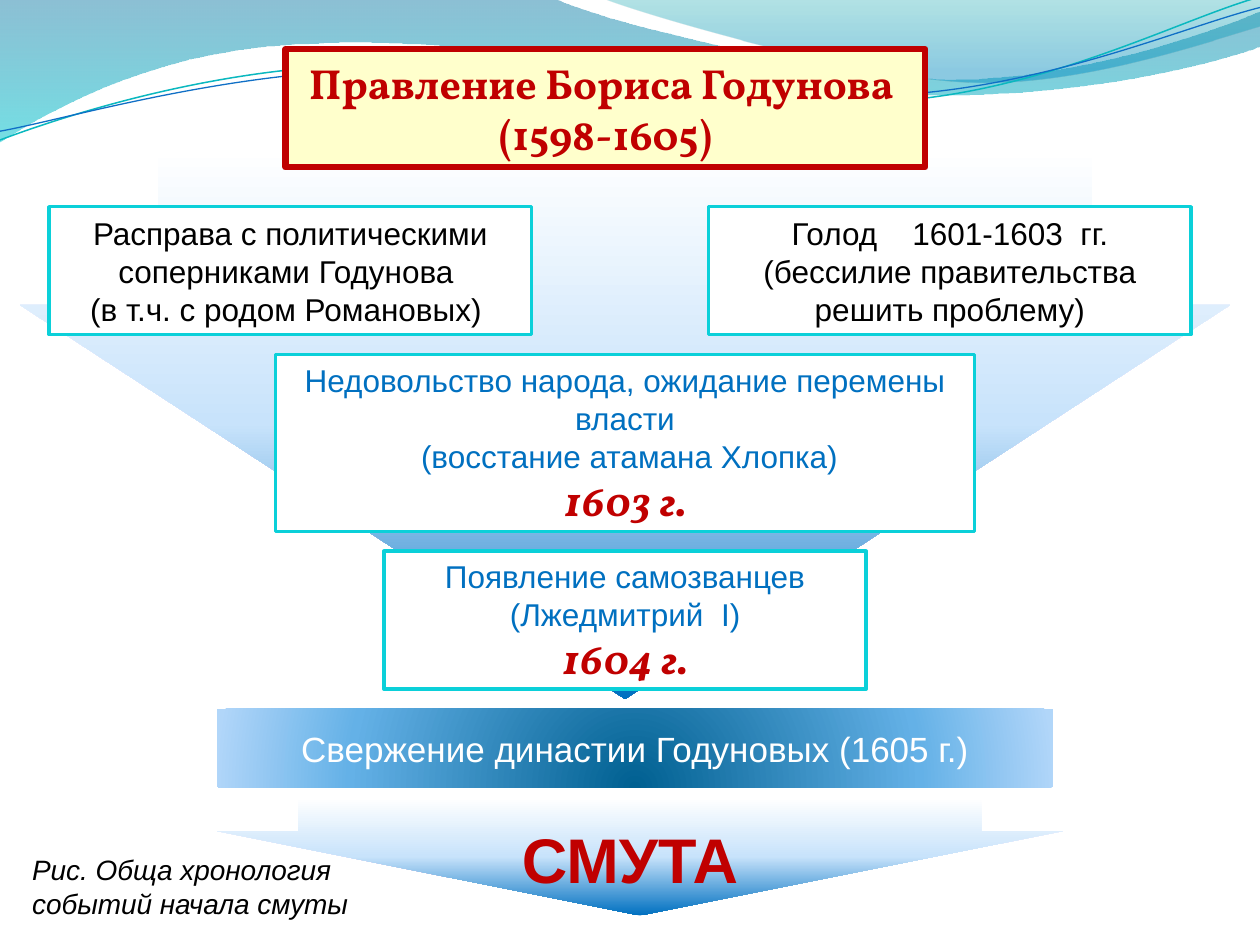
"""Build a slide on the reign of Boris Godunov and the start of the Troubles."""
import pptx
import pptx.dml.color
import pptx.enum.shapes
import pptx.enum.text
import pptx.oxml
import pptx.oxml.ns
import pptx.util

Pt = pptx.util.Pt
KIND = pptx.enum.shapes.MSO_SHAPE
ALIGN = pptx.enum.text.PP_ALIGN
ANCHOR = pptx.enum.text.MSO_ANCHOR
COLORS = {
    "red": "C00000", "cream": "FFFFCC", "white": "FFFFFF", "black": "000000",
    "blue": "0070C0", "edge": "0BD0D9", "pale": "C8E3FB",
    "deep": "006091", "mid": "64B1E7", "light": "B1D6F9",
    "sea": "0074A1", "aqua": "00C6CF", "teal": "00A1A9", "sky": "008BBF",
    "mint": "0AB8BF", "navy": "0F6FC6",
}
DOWN = '<a:lin ang="5400000" scaled="0"/>'
RADIAL = ('<a:path path="circle"><a:fillToRect l="50000" t="130000" '
          'r="50000" b="-30000"/></a:path>')
FADE = [(0, "white", 100), (50, "pale", 100), (100, "blue", 100)]


def color(name):
    """Return the named colour."""
    return pptx.dml.color.RGBColor.from_string(COLORS[name])


def make(xml):
    """Parse a drawing element that lacks its namespace."""
    head, rest = xml.split(">", 1)
    return pptx.oxml.parse_xml(f"{head} {pptx.oxml.ns.nsdecls('a')}>{rest}")


def blend(shape, stops, way=DOWN):
    """Fill a shape with a gradient of (place, colour, opacity) stops."""
    parts = "".join(
        f'<a:gs pos="{pos * 1000}"><a:srgbClr val="{COLORS[name]}">'
        f'<a:alpha val="{alpha * 1000}"/></a:srgbClr></a:gs>'
        for pos, name, alpha in stops)
    shape.fill.background()
    props = shape._element.spPr
    old = props.find(pptx.oxml.ns.qn("a:noFill"))
    props.replace(old, make(f"<a:gradFill><a:gsLst>{parts}</a:gsLst>{way}</a:gradFill>"))


def stroke(shape, name=None, width=0):
    """Set the outline of a shape, or remove it."""
    if name is None:
        shape.line.fill.background()
    else:
        shape.line.color.rgb = color(name)
        shape.line.width = Pt(width)


def write(shape, paras, align=ALIGN.CENTER, anchor=ANCHOR.MIDDLE):
    """Write paragraphs, each a list of (text, style) runs."""
    frame = shape.text_frame
    frame.word_wrap = True
    frame.vertical_anchor = anchor
    for index, runs in enumerate(paras):
        para = frame.add_paragraph() if index else frame.paragraphs[0]
        para.alignment = align
        for text, style in runs:
            run = para.add_run()
            run.text = text
            run.font.name = style.get("face", "Arial")
            run.font.size = Pt(style["size"])
            run.font.color.rgb = color(style["tint"])
            run.font.bold = style.get("bold", False)
            run.font.italic = style.get("slant", False)
            if "gap" in style:
                run._r.get_or_add_rPr().set("spc", str(style["gap"] * 100))


def block(slide, kind, area):
    """Add a plain preset shape."""
    shape = slide.shapes.add_shape(kind, *map(Pt, area))
    shape.shadow.inherit = False
    return shape


def arrow(slide, area, shaft):
    """Add a broad faded arrow that points down."""
    shape = block(slide, KIND.DOWN_ARROW, area)
    shape.adjustments[0] = shaft
    shape.adjustments[1] = 0.715
    blend(shape, FADE)
    stroke(shape)


def box(slide, area, paras, fill="white", edge="edge", width=2):
    """Add a framed box with text."""
    shape = block(slide, KIND.RECTANGLE, area)
    shape.fill.solid()
    shape.fill.fore_color.rgb = color(fill)
    stroke(shape, edge, width)
    write(shape, paras)


def label(slide, area, paras, align, anchor):
    """Add a text box."""
    shape = slide.shapes.add_textbox(*map(Pt, area))
    write(shape, paras, align, anchor)
    return shape


def wave(slide, start, parts, closed):
    """Add an outline of parts: one point for a line, three for a curve."""
    pen = slide.shapes.build_freeform(*map(Pt, start))
    pen.add_line_segments([(Pt(x), Pt(y)) for part in parts for x, y in part], close=closed)
    shape = pen.convert_to_shape()
    shape.shadow.inherit = False
    lines = iter(list(shape._element.iter(pptx.oxml.ns.qn("a:lnTo"))))
    for part in parts:
        group = [next(lines) for point in part]
        if len(group) == 3:
            curve = make("<a:cubicBezTo></a:cubicBezTo>")
            group[0].addprevious(curve)
            for line in group:
                curve.append(line[0])
                line.getparent().remove(line)
    return shape


def band(slide, start, parts, stops):
    """Add a clear wavy band."""
    shape = wave(slide, start, parts, True)
    blend(shape, stops)
    stroke(shape)


def thread(slide, start, parts, name, width):
    """Add a thin wavy line."""
    shape = wave(slide, start, parts, False)
    shape.fill.background()
    stroke(shape, name, width)


def crest(slide):
    """Add the waves along the top edge."""
    band(slide, (0, 0), [
        [(317, -0.8)], [(343, 12), (478, 45.2), (546, 45.2)], [(614, 45.2), (690, 19), (720, 6.5)],
        [(720.6, 26)], [(708, 32), (626, 55), (537, 54)], [(448, 54), (275, 20), (185, 24.5)],
        [(93, 26), (33, 60), (-0.8, 81.3)]], [(0, "sea", 45), (100, "aqua", 55)])
    band(slide, (345, -0.8), [
        [(366.5, 8), (491, 44.6), (553.7, 46.8)], [(616, 49.7), (692, 23), (720, 15)],
        [(720, 0)]], [(0, "teal", 30), (80, "sky", 45)])
    thread(slide, (0, 80), [
        [(34.6, 67), (113.8, 41), (199.4, 37.4)], [(284.4, 33.8), (427, 64), (513.4, 57.6)],
        [(599.8, 51), (675.4, 10.8), (718.6, -1.4)]], "mint", 0.85)
    thread(slide, (0, 75), [
        [(33.8, 69), (118, 44), (203.8, 40.3)], [(290.2, 36.7), (429.8, 60.5), (516.2, 54)],
        [(602, 48.2), (677.5, 15), (720, 4.3)]], "navy", 0.75)


def main():
    """Build and save the slide."""
    deck = pptx.Presentation()
    deck.slide_width, deck.slide_height = Pt(720), Pt(540)
    slide = deck.slides.add_slide(deck.slide_layouts[6])
    plain = {"size": 18, "tint": "black"}
    blue = {"size": 18, "tint": "blue"}
    head = {"size": 24, "tint": "red", "face": "Vollkorn", "bold": True}
    date = {**head, "slant": True}

    crest(slide)
    arrow(slide, (11.25, 84.38, 691.88, 315), 0.771)
    arrow(slide, (123.75, 455.63, 483.75, 67.5), 0.807)
    title = label(slide, (236.25, 461.25, 247.5, 50.63),
                  [[("СМУТА", {"size": 36, "tint": "red", "bold": True})]],
                  ALIGN.CENTER, ANCHOR.BOTTOM)
    frame = title.text_frame
    frame.margin_left = frame.margin_right = frame.margin_bottom = 0
    label(slide, (11.25, 483.75, 241.88, 46),
          [[("Рис. Обща хронология событий начала смуты",
             {"size": 16, "tint": "black", "slant": True})]], ALIGN.LEFT, ANCHOR.TOP)
    box(slide, (163.13, 28.13, 365.63, 67.5),
        [[("Правление Бориса Годунова ", head)], [("(1598-1605)", head)]],
        "cream", "red", 3.5)
    box(slide, (28.13, 118.13, 275.63, 73.13),
        [[("Расправа с политическими соперниками Годунова ", plain)],
         [("(в т.ч. с родом Романовых) ", plain)]])
    box(slide, (405, 118.13, 275.63, 73.13),
        [[("Голод", plain), (" ", {**plain, "gap": 15}), ("1601-1603", plain),
          (" ", {**plain, "gap": 5}),
          ("гг. (бессилие правительства решить проблему)", plain)]])
    box(slide, (157.5, 202.5, 399.38, 101.25),
        [[("Недовольство народа, ожидание перемены власти", blue)],
         [(" (восстание атамана Хлопка)", blue)], [("1603 г.", date)]])
    box(slide, (219.38, 315, 275.63, 78.75),
        [[("Появление самозванцев", blue)],
         [("(Лжедмитрий", blue), (" ", {**blue, "gap": 5}), ("I)", blue)],
         [("1604 г.", date)]])
    fall = block(slide, KIND.RECTANGLE, (123.75, 405, 478.13, 45))
    blend(fall, [(0, "deep", 100), (68, "mid", 100), (100, "light", 100)], RADIAL)
    stroke(fall)
    write(fall, [[("Свержение династии Годуновых (1605 г.)", {"size": 20, "tint": "white"})]])
    deck.save("out.pptx")


if __name__ == "__main__":
    main()
